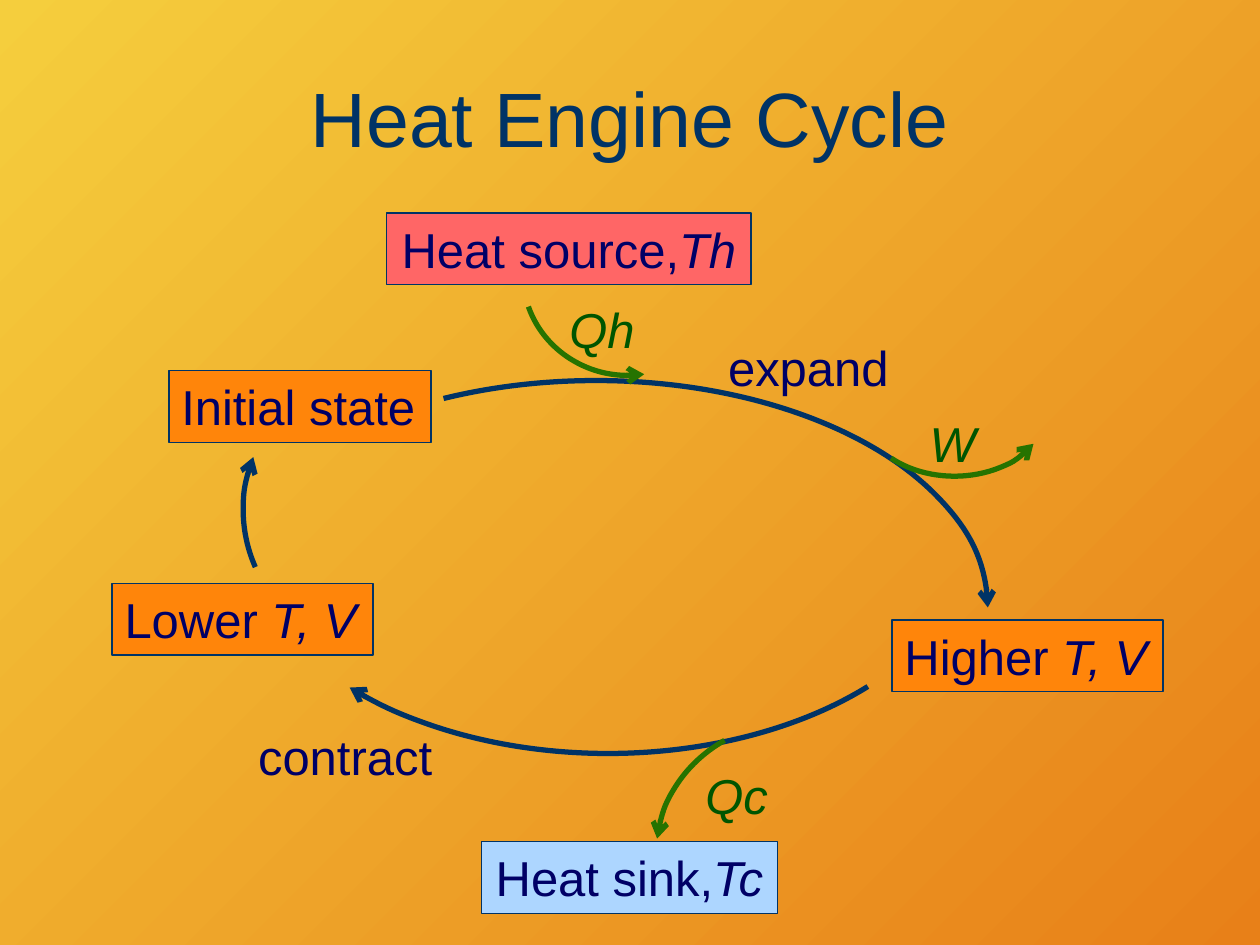
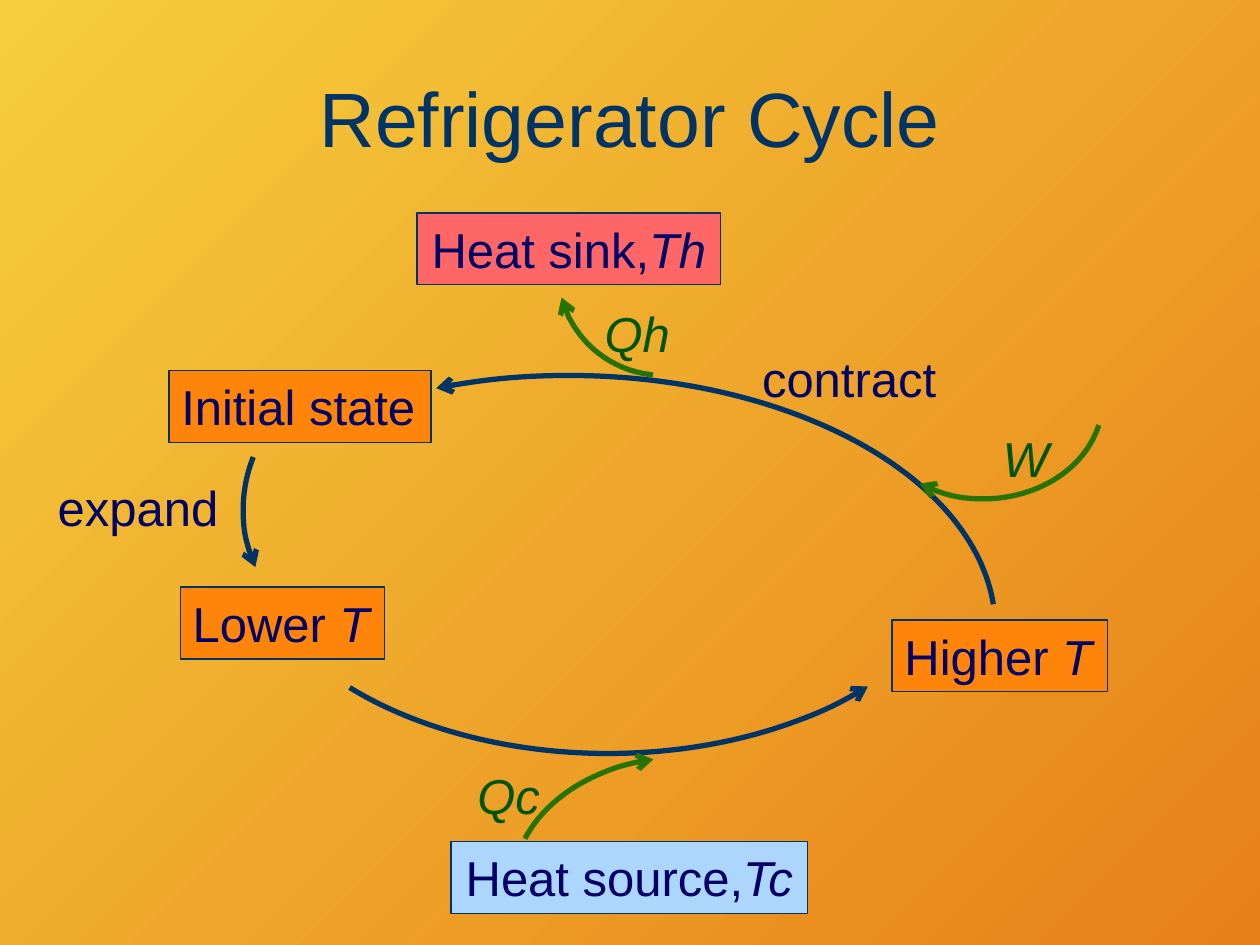
from dataclasses import dataclass

from lxml.etree import SubElement
from pptx import Presentation
from pptx.dml.color import RGBColor
from pptx.enum.shapes import MSO_SHAPE
from pptx.enum.text import MSO_ANCHOR, MSO_AUTO_SIZE, PP_ALIGN
from pptx.oxml.ns import qn
from pptx.shapes.autoshape import Shape
from pptx.slide import Slide
from pptx.util import Inches, Pt

COLS, ROWS = 100, 75
CELL = Inches(10) // COLS
FONT = "Arial"
NAVY, INK = "003366", "000066"
GREEN, LEAF = "267300", "005500"
ORANGE, RED, BLUE = "FF850A", "FF6666", "ADD6FF"
GOLD, RUST = "F5CE3D", "E88018"
DEEP = 5.7


@dataclass
class Box:
    left: float
    top: float
    wide: float
    text: str
    slant: str = ""
    fill: str = ORANGE
    align: PP_ALIGN = PP_ALIGN.LEFT


@dataclass
class Label:
    left: float
    top: float
    wide: float
    text: str = ""
    slant: str = ""
    color: str = INK


@dataclass
class Arc:
    left: float
    top: float
    wide: float
    tall: float
    start: float
    end: float
    tip: str
    color: str = NAVY


@dataclass
class Cycle:
    title: str
    items: list[Box | Label | Arc]


def paint(code: str) -> RGBColor:
    return RGBColor.from_string(code)


def place(left: float, top: float, wide: float, tall: float) -> list[int]:
    return [round(n * CELL) for n in (left, top, wide, tall)]


def write(shape: Shape, text: str, slant: str = "", size: int = 28,
          color: str = INK, align: PP_ALIGN = PP_ALIGN.LEFT,
          anchor: MSO_ANCHOR = MSO_ANCHOR.TOP, grow: bool = True) -> None:
    frame = shape.text_frame
    frame.word_wrap = not grow
    frame.auto_size = MSO_AUTO_SIZE.SHAPE_TO_FIT_TEXT if grow else MSO_AUTO_SIZE.NONE
    frame.vertical_anchor = anchor
    line = frame.paragraphs[0]
    line.alignment = align
    for words, tilt in ((text, False), (slant, True)):
        if words:
            run = line.add_run()
            run.text = words
            run.font.name = FONT
            run.font.size = Pt(size)
            run.font.italic = tilt
            run.font.color.rgb = paint(color)


def stroke(shape: Shape, color: str, width: float) -> None:
    shape.shadow.inherit = False
    shape.line.color.rgb = paint(color)
    shape.line.width = Pt(width)


def draw_box(slide: Slide, box: Box) -> None:
    shape = slide.shapes.add_shape(
        MSO_SHAPE.RECTANGLE, *place(box.left, box.top, box.wide, DEEP))
    stroke(shape, NAVY, 0.75)
    shape.fill.solid()
    shape.fill.fore_color.rgb = paint(box.fill)
    write(shape, box.text, box.slant, align=box.align)


def draw_label(slide: Slide, label: Label) -> None:
    shape = slide.shapes.add_textbox(
        *place(label.left, label.top, label.wide, DEEP))
    write(shape, label.text, label.slant, color=label.color)


def draw_arc(slide: Slide, arc: Arc) -> None:
    shape = slide.shapes.add_shape(
        MSO_SHAPE.ARC, *place(arc.left, arc.top, arc.wide, arc.tall))
    for i, angle in enumerate((arc.start, arc.end)):
        shape.adjustments[i] = angle * 0.6
    shape.fill.background()
    stroke(shape, arc.color, 3)
    SubElement(shape.element.spPr.find(qn("a:ln")), qn(f"a:{arc.tip}End"), type="arrow")


def draw_title(slide: Slide, text: str) -> None:
    shape = slide.shapes.add_textbox(*place(5, 3, COLS - 10, 12.5))
    write(shape, text, size=44, color=NAVY, align=PP_ALIGN.CENTER,
          anchor=MSO_ANCHOR.MIDDLE, grow=False)


def start_box() -> Box:
    return Box(13.4, 29.4, 20.8, "Initial state")


def hot_box(text: str, wide: float) -> Box:
    return Box(45.15 - wide / 2, 16.9, wide, text, "Th", RED, PP_ALIGN.CENTER)


def cold_box(text: str, wide: float) -> Box:
    return Box(49.95 - wide / 2, 66.8, wide, text, "Tc", BLUE, PP_ALIGN.CENTER)


def high_box(slant: str, wide: float) -> Box:
    return Box(70.8, 49.2, wide, "Higher ", slant)


def low_arc(tip: str) -> Arc:
    return Arc(19, 23.3, 58.5, 36.5, 32.09, 147.58, tip)


def left_arc(tip: str) -> Arc:
    return Arc(19.3, 29.2, 22.5, 22.5, 156.09, 201.77, tip)


def flow(name: str, left: float, top: float, wide: float = 7.3) -> Label:
    return Label(left, top, wide, slant=name, color=LEAF)


CYCLES = [
    Cycle("Heat Engine Cycle", [
        start_box(),
        Label(56.8, 26.3, 14.9, "expand"),
        high_box("T, V", 21.5),
        hot_box("Heat source,", 28.9),
        cold_box("Heat sink,", 23.5),
        Box(8.9, 46.3, 20.7, "Lower ", "T, V"),
        Arc(16.2, 30.2, 62.2, 36.2, 234.04, 359.84, "tail"),
        Arc(41.5, 13.7, 16.7, 16.1, 80.84, 161.88, "head", GREEN),
        flow("Qh", 44.2, 23.3),
        flow("W", 72.8, 32.3, 5.7),
        Arc(68.5, 27.5, 14.5, 10.3, 22.32, 143.59, "head", GREEN),
        low_arc("tail"),
        Arc(52.1, 57.2, 22.9, 20.8, 185.23, 235.62, "head", GREEN),
        flow("Qc", 55, 60.3),
        left_arc("tail"),
        Label(19.5, 57.2, 16, "contract"),
    ]),
    Cycle("Refrigerator Cycle", [
        start_box(),
        Label(59.5, 27.2, 16, "contract"),
        high_box("T", 17.1),
        hot_box("Heat sink,", 24.1),
        cold_box("Heat source,", 28.3),
        Box(14.3, 46.6, 16.2, "Lower ", "T"),
        Arc(11.4, 29.8, 67.6, 40.2, 241.02, 356.69, "head"),
        Arc(44.3, 13.2, 16.7, 16.6, 95.67, 165.27, "tail", GREEN),
        flow("Qh", 47, 23.6),
        flow("W", 78.6, 33.5, 5.7),
        Arc(68.6, 24, 18.9, 15.6, 11.96, 127.52, "tail", GREEN),
        low_arc("head"),
        Arc(40.7, 60.1, 27.2, 20.5, 196.68, 256.36, "tail", GREEN),
        flow("Qc", 36.9, 60.3),
        left_arc("head"),
        Label(3.6, 37.4, 14.9, "expand"),
    ]),
]
TOOLS = {Box: draw_box, Label: draw_label, Arc: draw_arc}


def main() -> None:
    deck = Presentation()
    deck.slide_width, deck.slide_height = COLS * CELL, ROWS * CELL
    back = deck.slide_master.background.fill
    back.gradient()
    back.gradient_angle = 315
    for stop, code in zip(back.gradient_stops, (GOLD, RUST)):
        stop.color.rgb = paint(code)
    for cycle in CYCLES:
        slide = deck.slides.add_slide(deck.slide_layouts[6])
        draw_title(slide, cycle.title)
        for item in cycle.items:
            TOOLS[type(item)](slide, item)
    deck.save("out.pptx")


if __name__ == "__main__":
    main()
